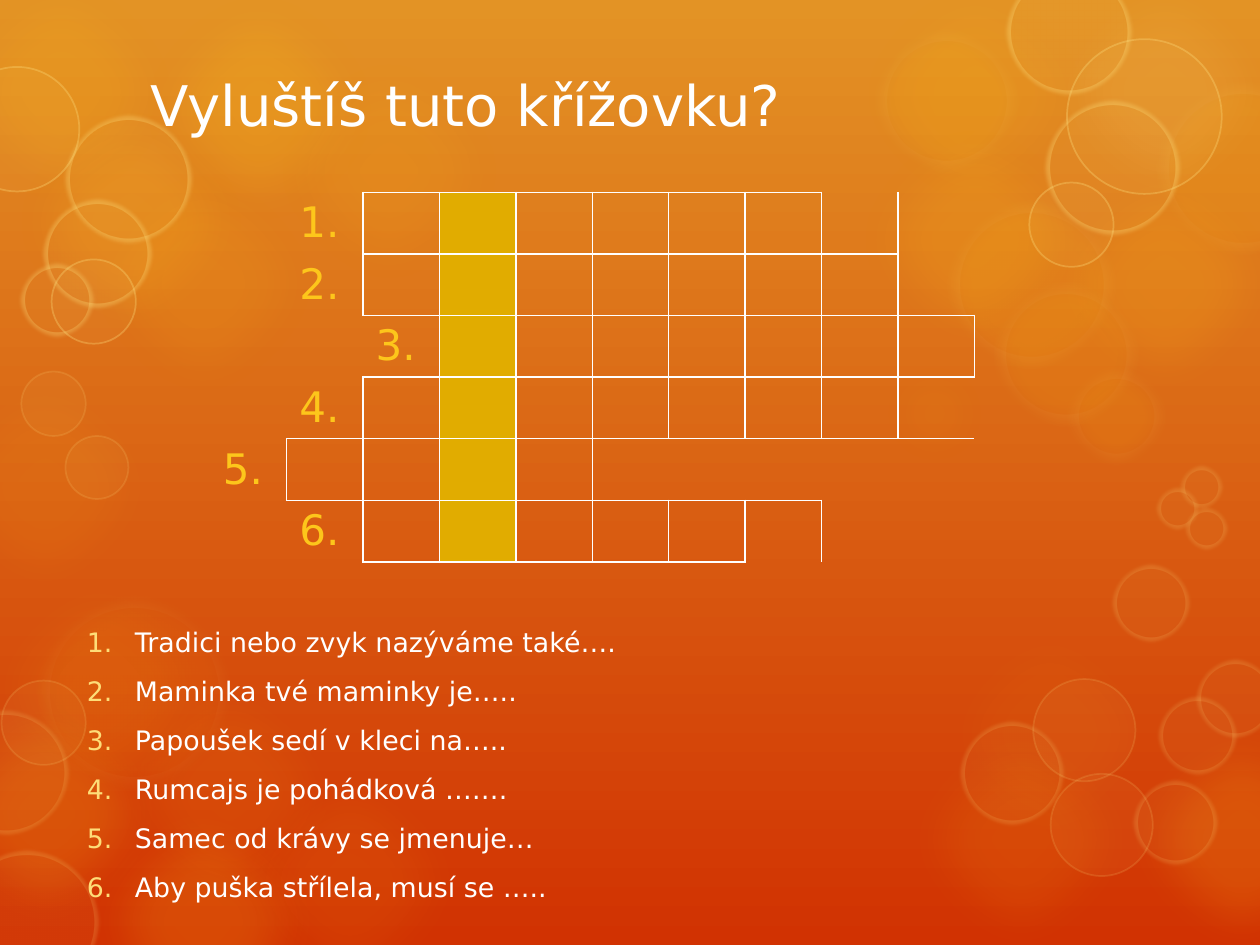
from dataclasses import dataclass

from lxml.etree import SubElement
from pptx import Presentation
from pptx.dml.color import RGBColor
from pptx.enum.shapes import MSO_SHAPE as Preset
from pptx.enum.text import MSO_ANCHOR as Anchor
from pptx.oxml.ns import qn
from pptx.util import Cm, Pt

WHITE = RGBColor(0xFF, 0xFF, 0xFF)
AMBER = RGBColor(0xFD, 0xC6, 0x1B)
PALE = RGBColor(0xFF, 0xE2, 0x81)
CREAM = RGBColor(0xFE, 0xEB, 0xAE)
NUMBER = RGBColor(0xFE, 0xDD, 0x78)
SECRET = RGBColor(0xE1, 0xAC, 0x00)
SKY = RGBColor(0xE3, 0x93, 0x25)
EMBER = RGBColor(0xD1, 0x32, 0x02)
FONT = "DejaVu Sans"
PLAIN_TABLE = "{2D5ABB26-0587-4C30-8999-92F81FD0307C}"  # no style, no grid
MIST = 5.3  # diameter of the large blurred bubbles


@dataclass(frozen=True)
class BubbleStyle:
    fill: RGBColor
    opacity: int
    blur: float = 0
    line: RGBColor | None = None
    line_width: float = 0
    line_opacity: int = 0


@dataclass(frozen=True)
class Answer:
    number_column: int
    length: int

    def covers(self, column: int) -> bool:
        return 0 < column - self.number_column <= self.length


def mist(opacity: int, colour: RGBColor = AMBER) -> BubbleStyle:
    return BubbleStyle(colour, opacity, 25)


def ring(width: float, opacity: int, blur: float = 0) -> BubbleStyle:
    return BubbleStyle(PALE, 5, blur, PALE, width, opacity)


# Each bubble is left, top, diameter in centimetres.
BUBBLES = [
    (mist(5), [(18.52, 12.12, MIST)]),
    (mist(8), [(-0.66, 11.23, MIST), (1.96, 13.31, MIST), (4.4, 15.14, MIST),
               (-1.75, 7.16, MIST)]),
    (mist(10), [(1.45, 3.05, MIST), (5.2, 0.79, MIST), (17, -0.75, MIST),
                (17.93, 14.27, MIST), (17.15, 6.65, 3.38)]),
    (mist(10, PALE), [(20.83, -0.82, MIST)]),
    (mist(14), [(-1.42, -0.82, MIST)]),
    (mist(15), [(0, 1.83, MIST), (20.83, 3.05, MIST), (17, 2.18, MIST)]),
    (mist(16), [(1.45, 15.92, MIST), (22.38, 14.27, MIST), (-1.73, 13.74, MIST)]),
    (mist(20), [(2.57, -0.46, MIST)]),
    (BubbleStyle(AMBER, 10, 10, CREAM, 14, 6), [
        (23.32, 1.65, 3.48), (17.63, 0.58, 2.9), (19.1, 4.04, 3.38),
        (20.04, 5.69, 2.9), (21.51, 7.39, 2)]),
    (BubbleStyle(AMBER, 6, 10, CREAM, 14, 4), [(0.76, 12.01, 3.89)]),
    (ring(1, 15), [(0.03, 13.72, 1.7), (21.18, 15.6, 2.06), (20.83, 13.69, 2.06),
                   (0.43, 7.49, 1.3), (1.32, 8.79, 1.27)]),
    (ring(5, 15, 2.5), [
        (-0.89, 17.15, 2.87), (-1.12, 14.33, 2.49), (19.38, 14.55, 2.06),
        (22.86, 15.75, 1.68), (22.43, 11.38, 1.55), (23.37, 14.05, 1.55),
        (24.13, 13.31, 1.55), (23.8, 9.4, 0.84), (23.32, 9.83, 0.84),
        (23.9, 10.24, 0.84)]),
    (ring(1, 30), [(-0.91, 1.35, 2.51), (1.04, 5.23, 1.7), (21.51, 0.79, 3.12),
                   (20.75, 3.68, 1.7)]),
    (ring(5, 30, 2.5), [
        (1.32, 2.34, 2.54), (0.89, 4.04, 2.16), (0.43, 5.33, 1.45),
        (20.29, -0.61, 2.51), (21.08, 2.03, 2.69)]),
]

COLUMNS, SECRET_COLUMN = 10, 3
ANSWERS = [Answer(1, 6), Answer(1, 7), Answer(2, 7),
           Answer(1, 6), Answer(0, 3), Answer(1, 5)]
CLUES = [
    "Tradici nebo zvyk nazýváme také….",
    "Maminka tvé maminky je…..",
    "Papoušek sedí v kleci na…..",
    "Rumcajs je pohádková …….",
    "Samec od krávy se jmenuje…",
    "Aby puška střílela, musí se …..",
]


def set_opacity(fill, colour: RGBColor, percent: int, element) -> None:
    fill.solid()
    fill.fore_color.rgb = colour
    rgb = element.find(qn("a:solidFill")).find(qn("a:srgbClr"))
    SubElement(rgb, qn("a:alpha"), val=str(percent * 1000))


def add_bubble(shapes, style: BubbleStyle, left: float, top: float, size: float) -> None:
    bubble = shapes.add_shape(Preset.OVAL, Cm(left), Cm(top), Cm(size), Cm(size))
    bubble.shadow.inherit = False
    properties = bubble.element.spPr
    set_opacity(bubble.fill, style.fill, style.opacity, properties)
    if style.line is None:
        bubble.line.fill.background()
    else:
        bubble.line.width = Pt(style.line_width)
        set_opacity(bubble.line.fill, style.line, style.line_opacity,
                    properties.find(qn("a:ln")))
    if style.blur:
        effects = properties.find(qn("a:effectLst"))
        SubElement(effects, qn("a:softEdge"), rad=str(int(Pt(style.blur))))


def add_run(paragraph, text: str, size: float, colour: RGBColor) -> None:
    run = paragraph.add_run()
    run.text = text
    run.font.name, run.font.size, run.font.color.rgb = FONT, Pt(size), colour


def is_box(row: int, column: int) -> bool:
    return 0 <= row < len(ANSWERS) and ANSWERS[row].covers(column)


def draw_borders(cell, row: int, column: int) -> None:
    """Rule every side that touches an answer box."""
    neighbours = {"L": (row, column - 1), "R": (row, column + 1),
                  "T": (row - 1, column), "B": (row + 1, column)}
    properties = cell._tc.get_or_add_tcPr()
    for side, neighbour in neighbours.items():
        if is_box(row, column) or is_box(*neighbour):
            line = SubElement(properties, qn(f"a:ln{side}"), w=str(int(Pt(1))))
            SubElement(SubElement(line, qn("a:solidFill")), qn("a:srgbClr"), val=str(WHITE))


def add_crossword(shapes) -> None:
    crossword = shapes.add_table(len(ANSWERS), COLUMNS, Cm(4.24), Cm(3.88),
                                 Cm(15.4), Cm(6.24)).table
    crossword.first_row = crossword.horz_banding = False
    crossword._tbl.tblPr.find(qn("a:tableStyleId")).text = PLAIN_TABLE
    for row, answer in enumerate(ANSWERS):
        for column in range(COLUMNS):
            cell = crossword.cell(row, column)
            draw_borders(cell, row, column)
            if column == SECRET_COLUMN:
                cell.fill.solid()
                cell.fill.fore_color.rgb = SECRET
            else:
                cell.fill.background()
            if column == answer.number_column:
                add_run(cell.text_frame.paragraphs[0], f"{row + 1}.", 24, AMBER)


def add_text_frame(shapes, left: float, top: float, height: float, anchor: Anchor):
    frame = shapes.add_textbox(Cm(left), Cm(top), Cm(19.79), Cm(height)).text_frame
    frame.word_wrap, frame.vertical_anchor = True, anchor
    return frame


def add_clues(shapes) -> None:
    frame = add_text_frame(shapes, 1.5, 12.12, 6.6, Anchor.TOP)
    frame.margin_top = Cm(0.5)
    for index, clue in enumerate(CLUES):
        paragraph = frame.add_paragraph() if index else frame.paragraphs[0]
        paragraph.space_before, paragraph.space_after = Pt(3.6), Pt(6)
        add_run(paragraph, clue, 15.3, WHITE)
        properties = paragraph._p.get_or_add_pPr()
        indent = int(Cm(0.97))
        properties.set("marL", str(indent))
        properties.set("indent", str(-indent))
        SubElement(SubElement(properties, qn("a:buClr")), qn("a:srgbClr"), val=str(NUMBER))
        SubElement(properties, qn("a:buFont"), typeface=FONT)
        SubElement(properties, qn("a:buAutoNum"), type="arabicPeriod")


def main() -> None:
    deck = Presentation()
    deck.slide_width, deck.slide_height = Cm(25.4), Cm(19.05)
    slide = deck.slides.add_slide(deck.slide_layouts[6])
    backdrop = slide.background.fill
    backdrop.gradient()
    backdrop.gradient_angle = 270
    for stop, colour in zip(backdrop.gradient_stops, (SKY, EMBER)):
        stop.color.rgb = colour
    for style, places in BUBBLES:
        for place in places:
            add_bubble(slide.shapes, style, *place)
    add_crossword(slide.shapes)
    title = add_text_frame(slide.shapes, 2.79, 0.91, 2.39, Anchor.MIDDLE)
    add_run(title.paragraphs[0], "Vyluštíš tuto křížovku?", 32, WHITE)
    add_clues(slide.shapes)
    deck.save("out.pptx")


if __name__ == "__main__":
    main()
